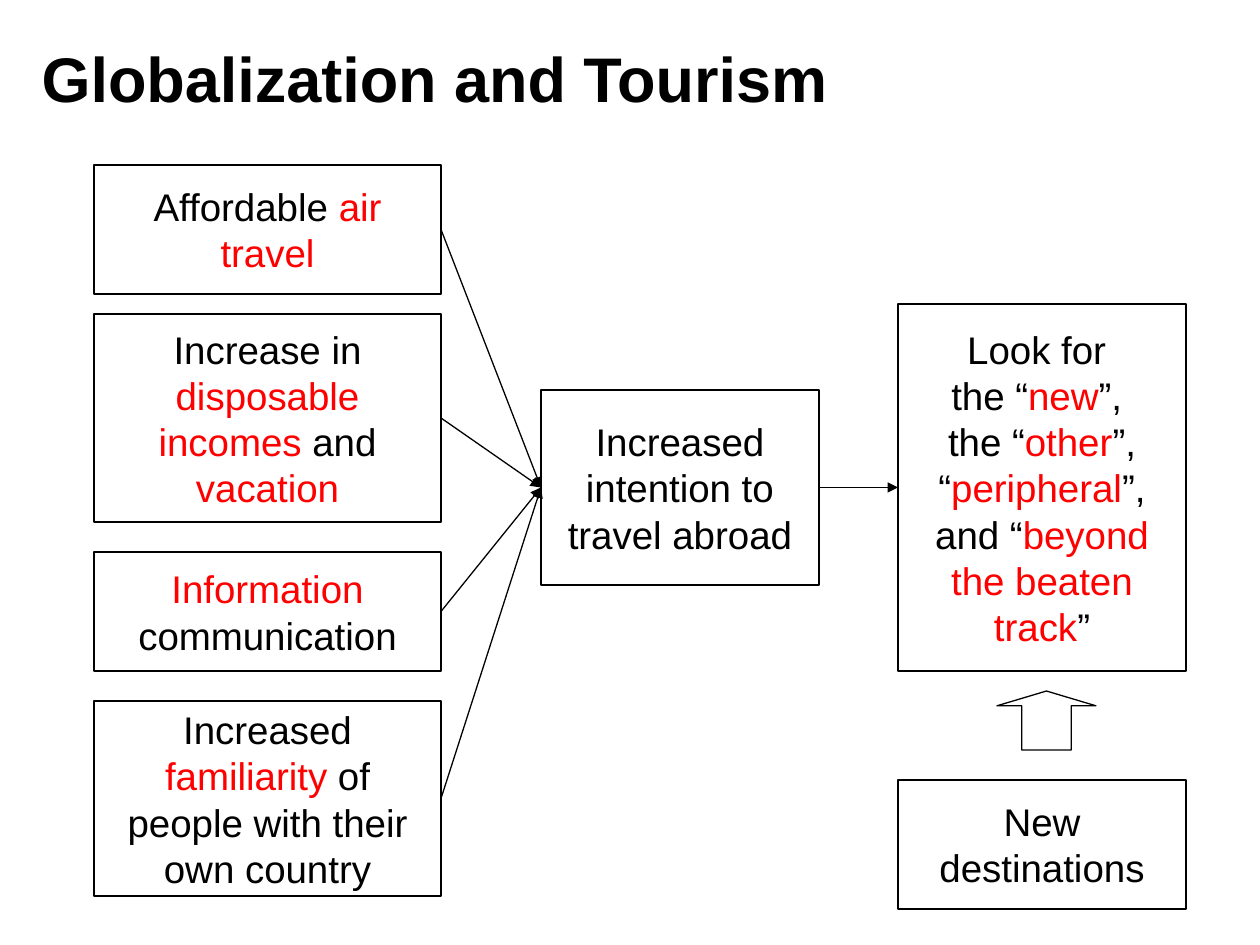
"""Build the slide on globalization and tourism as a flow of boxes."""
from dataclasses import dataclass

from lxml import etree
from pptx import Presentation
from pptx.dml.color import RGBColor
from pptx.enum.shapes import MSO_CONNECTOR, MSO_SHAPE
from pptx.enum.text import MSO_ANCHOR, MSO_AUTO_SIZE, PP_ALIGN
from pptx.oxml.ns import qn
from pptx.util import Emu, Pt

RECTANGLE = MSO_SHAPE.RECTANGLE
RIGHT_ARROW = MSO_SHAPE.RIGHT_ARROW
STRAIGHT = MSO_CONNECTOR.STRAIGHT
MIDDLE = MSO_ANCHOR.MIDDLE
NO_AUTOFIT = MSO_AUTO_SIZE.NONE
LEFT = PP_ALIGN.LEFT
CENTER = PP_ALIGN.CENTER

EMU_PER_PX = 914400 / 126
TITLE_ONLY_LAYOUT = 5
LEFT_SIDE, RIGHT_SIDE = 1, 3
BLACK, RED = "000000", "FF0000"
LINE_WIDTH = Pt(0.75)
TITLE_FONT = {"name": "Arial", "size": Pt(36), "bold": True}
BODY_FONT = {"name": "Arial", "size": Pt(22), "bold": False}
FRAME_FORMAT = {"word_wrap": True, "auto_size": NO_AUTOFIT, "vertical_anchor": MIDDLE}


@dataclass(frozen=True)
class Box:
    """A rectangle in px; its text has red words between asterisks."""

    left: int
    top: int
    width: int
    height: int
    text: str


CAUSES = [
    Box(94, top, 347, height, text)
    for top, height, text in (
        (165, 129, "Affordable *air travel*"),
        (314, 208, "Increase in *disposable incomes* and *vacation*"),
        (552, 119, "*Information* communication"),
        (701, 195, "Increased *familiarity* of people with their own country"),
    )
]
INTENTION = Box(541, 390, 278, 195, "Increased intention to travel abroad")
SEARCH = Box(
    898, 304, 288, 367,
    "Look for \nthe “*new*”, \nthe “*other*”, “*peripheral*”, and “*beyond the beaten track*”",
)
DESTINATIONS = Box(898, 780, 288, 129, "New destinations")


def px(length: int) -> Emu:
    """Turn px into EMU."""
    return Emu(round(length * EMU_PER_PX))


def color(value: str) -> RGBColor:
    """Turn a hex string into a colour."""
    return RGBColor.from_string(value)


def apply_format(target, values: dict) -> None:
    """Set each named attribute on the target."""
    for name, value in values.items():
        setattr(target, name, value)


def write_text(text_frame, text: str, font: dict, alignment) -> None:
    """Write one paragraph, with the words between asterisks in red."""
    apply_format(text_frame, FRAME_FORMAT)
    paragraph = text_frame.paragraphs[0]
    paragraph.alignment = alignment
    for index, segment in enumerate(text.split("*")):
        for line_number, line in enumerate(segment.split("\n")):
            if line_number:
                paragraph.add_line_break()
            if line:
                run = paragraph.add_run()
                run.text = line
                apply_format(run.font, font)
                run.font.color.rgb = color(RED if index % 2 else BLACK)


def add_outline(slide, kind, left: int, top: int, width: int, height: int):
    """Add an unfilled shape with a thin black line."""
    shape = slide.shapes.add_shape(kind, px(left), px(top), px(width), px(height))
    shape.shadow.inherit = False
    shape.fill.background()
    shape.line.color.rgb = color(BLACK)
    shape.line.width = LINE_WIDTH
    return shape


def add_box(slide, box: Box):
    """Add a rectangle with centred text."""
    shape = add_outline(slide, RECTANGLE, box.left, box.top, box.width, box.height)
    write_text(shape.text_frame, box.text, BODY_FONT, CENTER)
    return shape


def add_arrow(slide, source, target) -> None:
    """Join the right side of one box to the left side of another."""
    connector = slide.shapes.add_connector(STRAIGHT, 0, 0, 0, 0)
    connector.begin_connect(source, RIGHT_SIDE)
    connector.end_connect(target, LEFT_SIDE)
    connector.line.color.rgb = color(BLACK)
    connector.line.width = LINE_WIDTH
    etree.SubElement(connector.line._get_or_add_ln(), qn("a:tailEnd"), type="triangle")
    etree.SubElement(connector._element.spPr, qn("a:effectLst"))


def add_title(slide, text: str) -> None:
    """Place and fill the title placeholder."""
    title = slide.shapes.title
    apply_format(
        title, {"left": px(29), "top": px(19), "width": px(1012), "height": px(117)}
    )
    write_text(title.text_frame, text, TITLE_FONT, LEFT)


def add_up_arrow(slide) -> None:
    """Add the block arrow that points up to the search box."""
    arrow = add_outline(slide, RIGHT_ARROW, 1017, 671, 59, 99)
    arrow.adjustments[0] = 0.5
    arrow.adjustments[1] = 0.25
    arrow.rotation = 270


def main() -> None:
    """Build and save the presentation."""
    presentation = Presentation()
    presentation.slide_width = px(1260)
    presentation.slide_height = px(945)
    slide = presentation.slides.add_slide(presentation.slide_layouts[TITLE_ONLY_LAYOUT])
    add_title(slide, "Globalization and Tourism")
    causes = [add_box(slide, box) for box in CAUSES]
    intention, search, _ = [
        add_box(slide, box) for box in (INTENTION, SEARCH, DESTINATIONS)
    ]
    for cause in causes:
        add_arrow(slide, cause, intention)
    add_arrow(slide, intention, search)
    add_up_arrow(slide)
    presentation.save("out.pptx")


if __name__ == "__main__":
    main()
